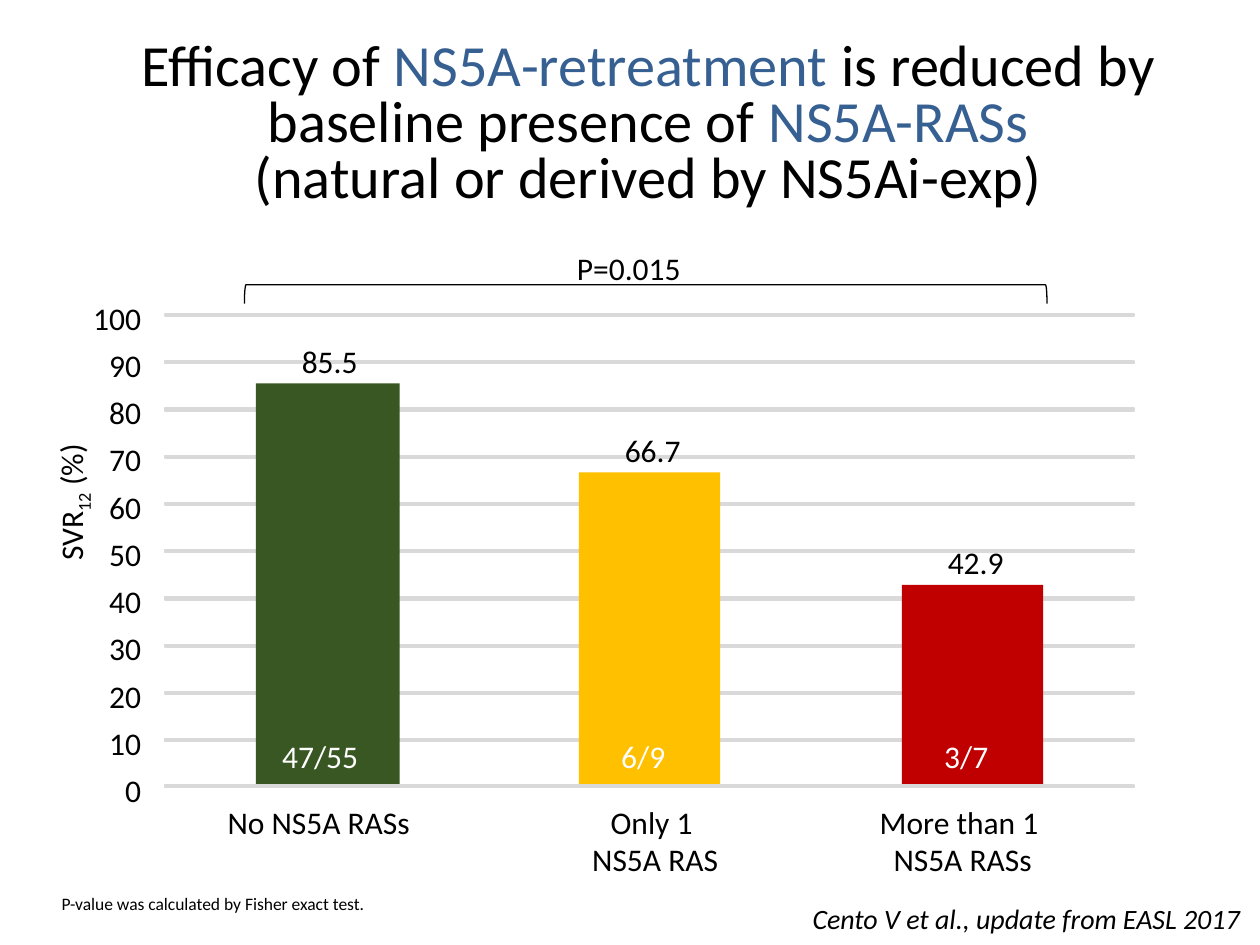
from collections import namedtuple

from pptx import Presentation, util as u
from pptx.dml.color import RGBColor
from pptx.enum import shapes, text

Box = namedtuple("Box", "left top width height")
Group = namedtuple("Group", "lines rate count colour bar_width count_width name_centre name_width")

FONT = "Calibri"
COLOURS = {
    "black": "000000", "white": "FFFFFF", "blue": "376092", "grid": "D9D9D9",
    "green": "385723", "yellow": "FFC000", "red": "C00000",
}
GROUPS = [
    Group(["No NS5A RASs"], 85.5, "47/55", "green", 1.14, 0.61, 2.53, 1.46),
    Group(["Only 1 ", "NS5A RAS"], 66.7, "6/9", "yellow", 1.12, 0.35, 5.2, 1.01),
    Group(["More than 1 ", "NS5A RASs"], 42.9, "3/7", "red", 1.12, 0.35, 7.64, 1.33),
]
STEPS = 10
LABEL_HEIGHT = 0.3
RULE = 0.02


def rgb(name):
    return RGBColor.from_string(COLOURS[name])


def inches(box):
    return [u.Inches(length) for length in box]


def add_text(page, box, lines, size=18, colour="black", align=text.PP_ALIGN.LEFT,
             inset=False, wrap=False):
    """Add a text box; each line is a string or a list of (string, colour) spans."""
    shape = page.shapes.add_textbox(*inches(box))
    frame = shape.text_frame
    frame.word_wrap = wrap
    if not inset:
        frame.margin_left = frame.margin_top = frame.margin_right = frame.margin_bottom = 0
    for index, line in enumerate(lines):
        para = frame.paragraphs[0] if index == 0 else frame.add_paragraph()
        para.alignment = align
        para.font.name = FONT
        para.font.size = u.Pt(size)
        para.font.color.rgb = rgb(colour)
        for words, span_colour in [(line, colour)] if isinstance(line, str) else line:
            span = para.add_run()
            span.text = words
            if span_colour != colour:
                span.font.color.rgb = rgb(span_colour)
    return shape


def paint(shape, fill, outlined=False):
    shape.shadow.inherit = False
    shape.fill.solid()
    shape.fill.fore_color.rgb = rgb(fill)
    if outlined:
        shape.line.color.rgb = rgb(fill)
        shape.line.width = u.Pt(1)
    else:
        shape.line.fill.background()


def add_bar(page, box, fill, outlined=False):
    bar = page.shapes.add_shape(shapes.MSO_SHAPE.RECTANGLE, *inches(box))
    paint(bar, fill, outlined)


def add_title(page, box):
    title = add_text(page, box, [
        [("Efficacy of ", "black"), ("NS5A-retreatment ", "blue"),
         ("is reduced by baseline presence of ", "black"), ("NS5A-RASs", "blue")],
        "(natural or derived by NS5Ai-exp)",
    ], size=33.3, align=text.PP_ALIGN.CENTER, inset=True, wrap=True)
    title.text_frame.vertical_anchor = text.MSO_ANCHOR.MIDDLE
    for para in title.text_frame.paragraphs:
        para.line_spacing = 0.8


def add_p_value(page, box):
    # A right bracket turned a quarter left opens downwards
    middle_x, middle_y = box.left + box.width / 2, box.top + box.height / 2
    upright = Box(middle_x - box.height / 2, middle_y - box.width / 2, box.height, box.width)
    bracket = page.shapes.add_shape(shapes.MSO_SHAPE.RIGHT_BRACKET, *inches(upright))
    bracket.rotation = 270
    bracket.shadow.inherit = False
    bracket.fill.background()
    bracket.line.color.rgb = rgb("black")
    bracket.line.width = u.Pt(0.75)
    add_text(page, Box(box.left + 2.54, box.top - 0.33, 2.69, 0.4), ["P=0.015"],
             inset=True, wrap=True)


def add_gridlines(page, box):
    step = box.height / STEPS
    right = box.left + box.width
    grid = None
    for index in range(STEPS):
        top = box.top - RULE + 0.01 + index * step
        bottom = top + RULE
        start = (u.Inches(box.left), u.Inches(top))
        if grid is None:
            grid = page.shapes.build_freeform(*start)
        else:
            grid.move_to(*start)
        corners = [(right, top), (right, bottom), (box.left, bottom)]
        grid.add_line_segments([(u.Inches(x), u.Inches(y)) for x, y in corners], close=True)
    paint(grid.convert_to_shape(), "grid", outlined=True)


def add_axis(page, box):
    base = box.top + box.height
    for index in range(STEPS + 1):
        label = str(index * 100 // STEPS)
        width = 0.13 * len(label)
        top = base - 0.13 - index * box.height / STEPS
        add_text(page, Box(box.left - 0.19 - width, top, width, LABEL_HEIGHT), [label],
                 align=text.PP_ALIGN.RIGHT)
    # Axis title, reading upwards
    title = add_text(page, Box(box.left - 1.26, box.top + 1.29, 1.02, LABEL_HEIGHT),
                     [[("SVR", "black"), ("12", "black"), (" (%)", "black")]])
    title.rotation = 270
    subscript = title.text_frame.paragraphs[0].runs[1]
    subscript.font._element.set("baseline", "-25000")


def add_bar_chart(page, box):
    base = box.top + box.height
    pitch = box.width / len(GROUPS)
    centres = [box.left + pitch * (index + 0.5) for index in range(len(GROUPS))]
    add_gridlines(page, box)
    for group, centre in zip(GROUPS, centres):
        height = box.height * group.rate / 100
        add_bar(page, Box(centre - 0.56, base - height, group.bar_width, height), group.colour)
    add_bar(page, Box(box.left, base - RULE, box.width, RULE), "grid", outlined=True)

    # Counts, rates and group names
    centred = text.PP_ALIGN.CENTER
    for group, centre in zip(GROUPS, centres):
        top = base - box.height * group.rate / 100
        add_text(page, Box(centre - 0.05 - group.count_width / 2, base - 0.4,
                           group.count_width, LABEL_HEIGHT),
                 [group.count], colour="white", align=centred)
        add_text(page, Box(centre - 0.2, top - 0.33, 0.45, LABEL_HEIGHT),
                 [str(group.rate)], align=centred)
        add_text(page, Box(group.name_centre - group.name_width / 2, base + 0.12,
                           group.name_width, LABEL_HEIGHT * len(group.lines)),
                 group.lines, align=centred)
    add_axis(page, box)


def add_footer(page, note_box, source_box):
    add_text(page, note_box, ["P-value was calculated by Fisher exact test."], size=10,
             align=text.PP_ALIGN.JUSTIFY, inset=True, wrap=True)
    source = add_text(page, source_box, ["Cento V et al., update from EASL 2017"], size=16,
                      inset=True)
    source.text_frame.paragraphs[0].font.italic = True


def main():
    deck = Presentation()
    deck.slide_width, deck.slide_height = u.Inches(10), u.Inches(7.5)
    page = deck.slides.add_slide(deck.slide_layouts[6])
    add_title(page, Box(0.54, 0.27, 9.21, 1.45))
    add_footer(page, Box(0.39, 7.04, 3.32, 0.27), Box(6.35, 7.11, 3.69, 0.37))
    add_p_value(page, Box(1.94, 2.26, 6.37, 0.15))
    add_bar_chart(page, Box(1.31, 2.5, 7.69, 3.75))
    deck.save("out.pptx")


if __name__ == "__main__":
    main()
